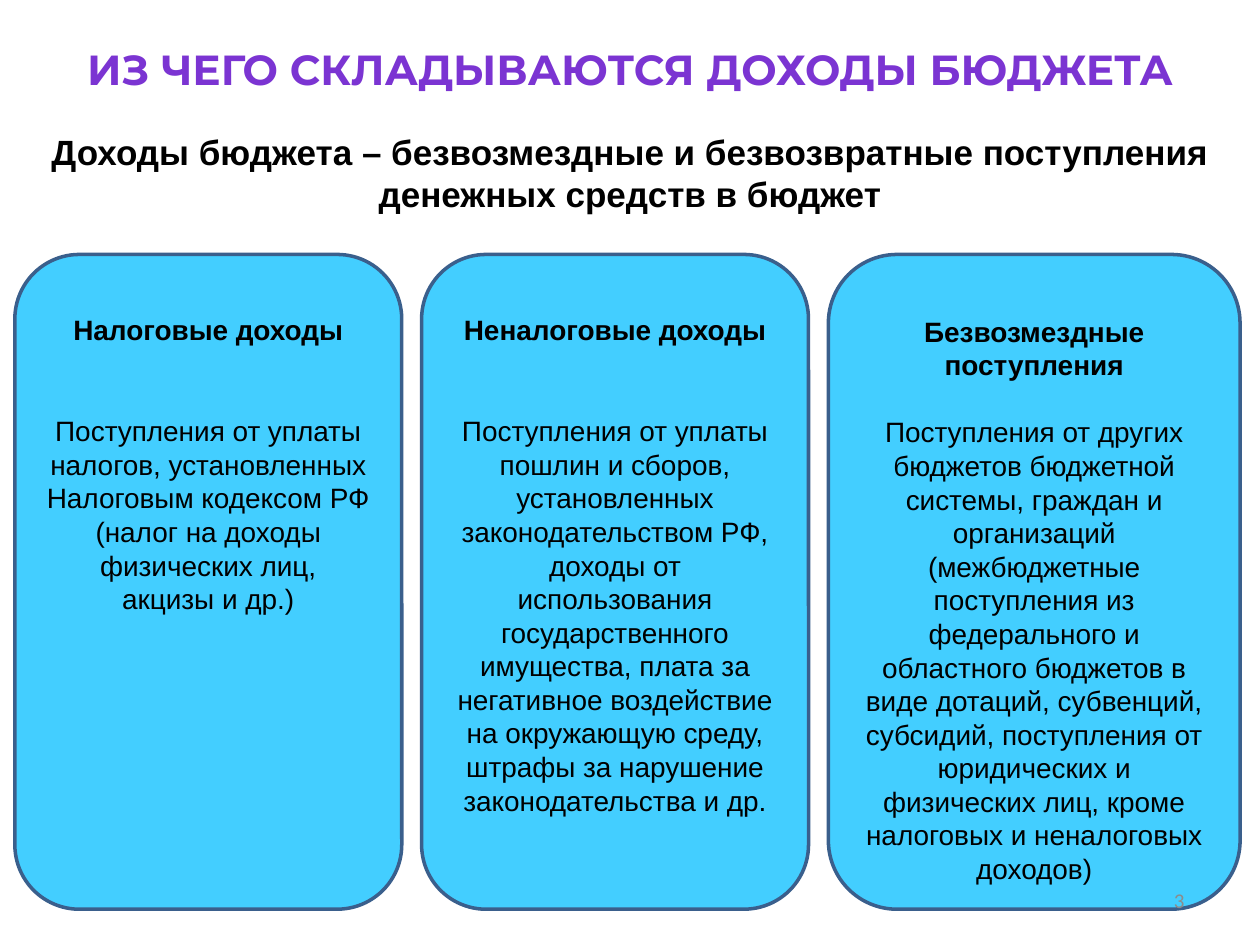
from dataclasses import dataclass

from lxml import etree
from pptx import Presentation
from pptx.dml.color import RGBColor
from pptx.enum.shapes import MSO_SHAPE
from pptx.enum.text import MSO_ANCHOR, PP_ALIGN
from pptx.oxml.ns import qn
from pptx.util import Cm, Pt

CENTER, RIGHT = PP_ALIGN.CENTER, PP_ALIGN.RIGHT
TOP, MIDDLE = MSO_ANCHOR.TOP, MSO_ANCHOR.MIDDLE
ROUND = MSO_SHAPE.ROUNDED_RECTANGLE


@dataclass(frozen=True)
class Theme:
    """Colours, fonts and type sizes of the slide."""
    title: str = "7B34D2"
    ink: str = "000000"
    fill: str = "43CEFF"
    edge: str = "3A5F8C"
    muted: str = "8C8C8C"
    head: str = "Montserrat"
    body: str = "Arial"
    small: str = "Calibri"
    title_pt: int = 24
    lead_pt: int = 20
    card_pt: int = 16
    page_pt: int = 12


THEME = Theme()
LINE = 19.2

CARDS = [
    (7.8, ["Налоговые доходы"], 2, [
        "Поступления от уплаты налогов, установленных",
        "Налоговым кодексом РФ",
        "(налог на доходы физических лиц,",
        "акцизы и др.)",
    ]),
    (7.8, ["Неналоговые доходы"], 2, [
        "Поступления от уплаты",
        "пошлин и сборов,",
        "установленных",
        "законодательством РФ,",
        "доходы от использования",
        "государственного",
        "имущества, плата за",
        "негативное воздействие на окружающую среду,",
        "штрафы за нарушение",
        "законодательства и др.",
    ]),
    (8.3, ["Безвозмездные", "поступления"], 1, [
        "Поступления от других",
        "бюджетов бюджетной",
        "системы, граждан и",
        "организаций (межбюджетные поступления из",
        "федерального и областного бюджетов в",
        "виде дотаций, субвенций,",
        "субсидий, поступления от юридических и",
        "физических лиц, кроме",
        "налоговых и неналоговых",
        "доходов)",
    ]),
]


def style(para, size, name, color, bold=False, align=CENTER):
    """Set the font and alignment of a paragraph."""
    para.alignment = align
    font = para.font
    font.size, font.name, font.bold = Pt(size), name, bold
    font.color.rgb = RGBColor.from_string(color)


def write(frame, lines, size, bold=False):
    """Fill a frame with centred body lines and return its paragraphs."""
    frame.word_wrap = True
    frame.text = "\n".join(lines)
    for para in frame.paragraphs:
        style(para, size, THEME.body, THEME.ink, bold)
    return frame.paragraphs


def add_title(slide, x, y, w, h):
    """Place the slide title in its box."""
    title = slide.shapes.title
    title.left, title.top, title.width, title.height = map(Cm, (x, y, w, h))
    frame = title.text_frame
    frame.text = "ИЗ ЧЕГО СКЛАДЫВАЮТСЯ ДОХОДЫ БЮДЖЕТА"
    frame.vertical_anchor = MIDDLE
    style(frame.paragraphs[0], THEME.title_pt, THEME.head, THEME.title, True)


def add_lead(slide, x, y, w, h):
    """Place the definition under the title."""
    box = slide.shapes.add_textbox(Cm(x), Cm(y), Cm(w), Cm(h))
    write(box.text_frame, [
        "Доходы бюджета – безвозмездные и безвозвратные поступления",
        "денежных средств в бюджет",
    ], THEME.lead_pt, True)


def add_card(slide, x, y, w, h, heads, gap, lines):
    """Draw one rounded card with a bold heading and body lines."""
    card = slide.shapes.add_shape(ROUND, Cm(x), Cm(y), Cm(w), Cm(h))
    card.shadow.inherit = False
    card.fill.solid()
    card.fill.fore_color.rgb = RGBColor.from_string(THEME.fill)
    card.line.color.rgb = RGBColor.from_string(THEME.edge)
    card.line.width = Pt(2)
    frame = card.text_frame
    frame.vertical_anchor = TOP
    frame.margin_top = Cm(0.8)
    paras = write(frame, heads + lines, THEME.card_pt)
    for para in paras[:len(heads)]:
        para.font.bold = True
    paras[len(heads)].space_before = Pt(gap * LINE)


def add_cards(slide, x, y, h, gap):
    """Lay the cards in a row with equal gaps."""
    for w, heads, skip, lines in CARDS:
        add_card(slide, x, y, w, h, heads, skip, lines)
        x += w + gap


def add_page(slide, x, y, w, h):
    """Place the slide number field."""
    box = slide.shapes.add_textbox(Cm(x), Cm(y), Cm(w), Cm(h))
    frame = box.text_frame
    frame.word_wrap = True
    frame.vertical_anchor = MIDDLE
    para = frame.paragraphs[0]
    style(para, THEME.page_pt, THEME.small, THEME.muted, align=RIGHT)
    field = etree.SubElement(para._p, qn("a:fld"), type="slidenum",
                             id="{B6F15528-21DE-4FAA-801E-634DDDAF4B2B}")
    etree.SubElement(field, qn("a:rPr"), lang="ru-RU")
    etree.SubElement(field, qn("a:t")).text = "3"


def main():
    """Build and save the slide."""
    deck = Presentation()
    deck.slide_width, deck.slide_height = Cm(25.4), Cm(19.05)
    deck.element.set("firstSlideNum", "3")
    slide = deck.slides.add_slide(deck.slide_layouts[5])
    add_title(slide, 0, 0.75, 25.4, 1.25)
    add_lead(slide, 0, 2.5, 25.4, 1.95)
    add_cards(slide, 0.3, 5.13, 13.2, 0.4)
    add_page(slide, 18.2, 17.65, 5.93, 1)
    deck.save("out.pptx")


if __name__ == "__main__":
    main()
